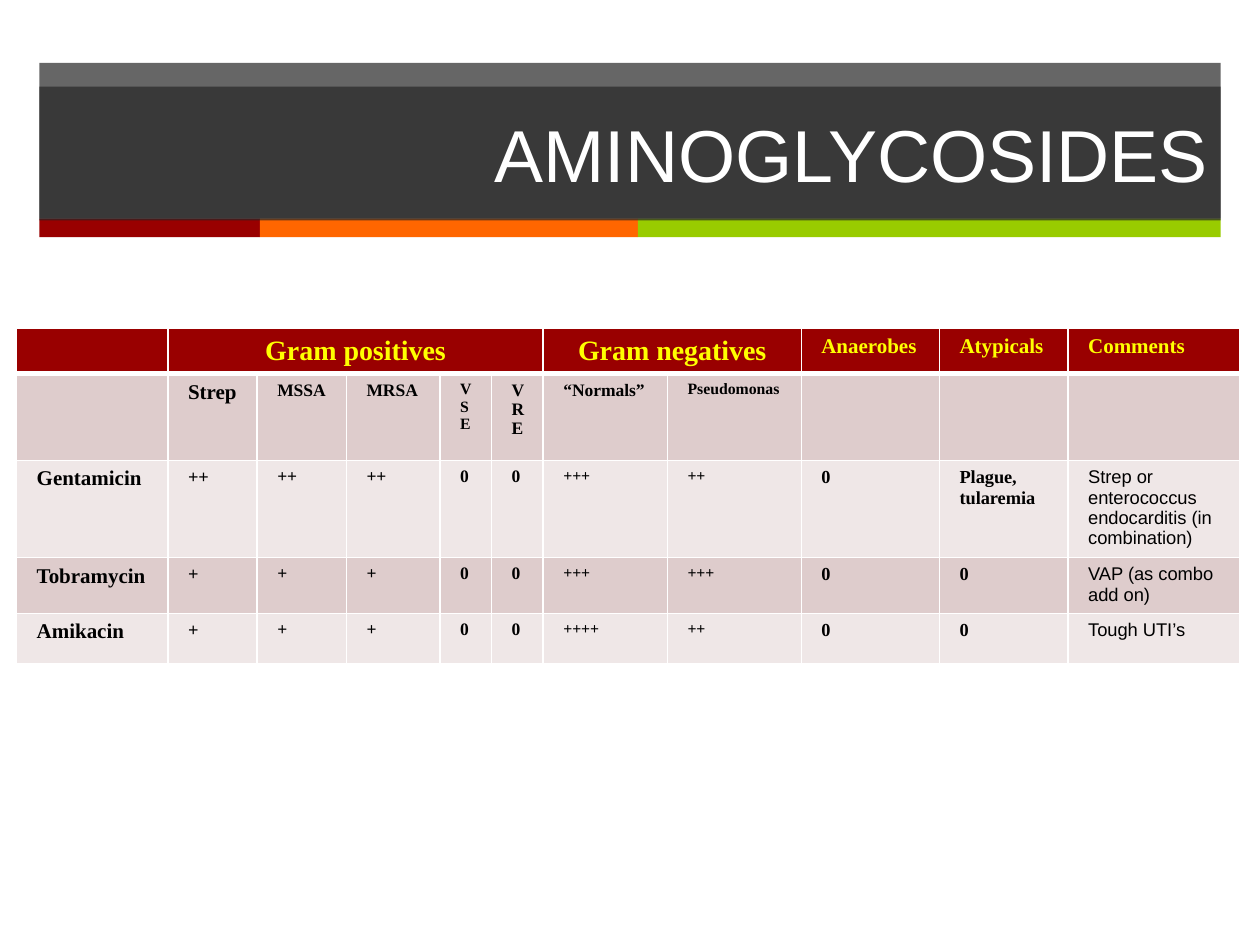
import pptx
import pptx.util
import pptx.dml.color
import pptx.enum.shapes
import pptx.enum.text
import pptx.oxml
import pptx.oxml.ns

Pt = pptx.util.Pt
RGB = pptx.dml.color.RGBColor
ALIGN = pptx.enum.text.PP_ALIGN
MIDDLE = pptx.enum.text.MSO_ANCHOR.MIDDLE

CHARCOAL = RGB(0x26, 0x26, 0x26)
CRIMSON = RGB(0x99, 0x00, 0x00)
ORANGE = RGB(0xFF, 0x66, 0x00)
LIME = RGB(0x99, 0xCC, 0x00)
YELLOW = RGB(0xFF, 0xFF, 0x00)
WHITE = RGB(0xFF, 0xFF, 0xFF)
BLACK = RGB(0x00, 0x00, 0x00)
ROSE = RGB(0xDE, 0xCC, 0xCC)
PALE_ROSE = RGB(0xEF, 0xE7, 0xE7)

SERIF, SANS = "Times New Roman", "Arial"
DRUG_WIDTHS = [86.5, 51, 51, 53.5, 29.5, 29.5, 71, 76.5, 79, 73.5, 98]
ROW_HEIGHTS = [26, 49.5, 55.5, 32, 29]
HEADING_SIZES = [12] + [16] * 7 + [12] * 3
ORGANISM_SIZES = [12, 12, 10, 10, 9, 10, 10, 9, 12, 12, 12]
DRUG_SIZES = [12, 10.5, 10, 10, 10, 10, 9, 9, 10.5, 10.5, 10.5]
SPECTRUM = [
    ["", "Gram positives", "", "", "", "", "Gram negatives", "",
     "Anaerobes", "Atypicals", "Comments"],
    ["", "Strep", "MSSA", "MRSA", "VSE", "VRE", "“Normals”", "Pseudomonas", "", "", ""],
    ["Gentamicin", "++", "++", "++", "0", "0", "+++", "++", "0", "Plague, tularemia",
     "Strep or enterococcus endocarditis (in combination)"],
    ["Tobramycin", "+", "+", "+", "0", "0", "+++", "+++", "0", "0", "VAP (as combo add on)"],
    ["Amikacin", "+", "+", "+", "0", "0", "++++", "++", "0", "0", "Tough UTI’s"],
]


def apply(target, formats):
    """Set each attribute of the target from a dict of format values."""
    for name, value in formats.items():
        setattr(target, name, value)


def fill_solid(part, color, opacity=None):
    """Fill a shape or cell with one colour, optionally translucent."""
    part.fill.solid()
    part.fill.fore_color.rgb = color
    if opacity:
        srgb = part._element.find(".//" + pptx.oxml.ns.qn("a:srgbClr"))
        srgb.append(pptx.oxml.parse_xml(
            f'<a:alpha {pptx.oxml.ns.nsdecls("a")} val="{opacity * 1000}"/>'))


def add_bar(slide, left, top, width, height, color, opacity=None):
    """Draw one plain bar of the banner."""
    bar = slide.shapes.add_shape(pptx.enum.shapes.MSO_SHAPE.RECTANGLE,
                                 Pt(left), Pt(top), Pt(width), Pt(height))
    bar.shadow.inherit = False
    bar.line.fill.background()
    fill_solid(bar, color, opacity)


def build_banner(slide, left, top, width, height):
    """Place the translucent banner, its colour strip and the title."""
    strip_height = 10.5
    strip_top = top + height - strip_height
    add_bar(slide, left, top, width, strip_top - top, CHARCOAL, 70)
    strip_left = left
    for color, share in ((CRIMSON, 126), (ORANGE, 216), (LIME, width - 342)):
        add_bar(slide, strip_left, strip_top, share, strip_height, color)
        strip_left += share
    title = slide.shapes.title
    apply(title, {"left": Pt(left), "top": Pt(top + 13.5),
                  "width": Pt(width), "height": Pt(76.5)})
    fill_solid(title, CHARCOAL, 70)
    apply(title.text_frame, {"text": "AMINOGLYCOSIDES", "word_wrap": True,
                             "vertical_anchor": MIDDLE})
    heading = title.text_frame.paragraphs[0]
    heading.alignment = ALIGN.RIGHT
    apply(heading.runs[0].font, {"name": SANS, "size": Pt(42), "bold": False})
    heading.runs[0].font.color.rgb = WHITE
    slide.shapes._spTree.append(title._element)


def add_borders(cell, widths):
    """Give a cell white borders, with a width in points for each side."""
    properties = cell._tc.get_or_add_tcPr()
    for side, width in widths.items():
        properties.append(pptx.oxml.parse_xml(
            f'<a:ln{side} {pptx.oxml.ns.nsdecls("a")} w="{Pt(width)}">'
            f'<a:solidFill><a:srgbClr val="{WHITE}"/></a:solidFill></a:ln{side}>'))


def write_cell(cell, wording, size, color, font_name):
    """Write a cell's wording in its font, or size an empty cell."""
    apply(cell, {"margin_left": Pt(11.5), "margin_right": Pt(11.5),
                 "margin_top": Pt(4), "margin_bottom": Pt(4)})
    paragraph = cell.text_frame.paragraphs[0]
    if not wording:
        paragraph._p.get_or_add_endParaRPr().set("sz", str(size * 100))
        return
    run = paragraph.add_run()
    run.text = wording
    apply(run.font, {"name": font_name, "size": Pt(size), "bold": font_name == SERIF})
    run.font.color.rgb = color
    if size == 16:
        paragraph.alignment = ALIGN.CENTER


def build_spectrum_table(slide, left, top):
    """Place the table of drugs against organisms."""
    table = slide.shapes.add_table(
        len(ROW_HEIGHTS), len(DRUG_WIDTHS), Pt(left), Pt(top),
        Pt(sum(DRUG_WIDTHS)), Pt(sum(ROW_HEIGHTS))).table
    for column, width in zip(table.columns, DRUG_WIDTHS):
        column.width = Pt(width)
    for row, height in zip(table.rows, ROW_HEIGHTS):
        row.height = Pt(height)
    row_sizes = [HEADING_SIZES, ORGANISM_SIZES] + [DRUG_SIZES] * 3
    row_fills = [CRIMSON, ROSE, PALE_ROSE, ROSE, PALE_ROSE]
    for r, (wordings, sizes, fill) in enumerate(zip(SPECTRUM, row_sizes, row_fills)):
        for c, (wording, size) in enumerate(zip(wordings, sizes)):
            cell = table.cell(r, c)
            is_comment = r > 1 and c == len(wordings) - 1
            write_cell(cell, wording, size, BLACK if r else YELLOW,
                       SANS if is_comment else SERIF)
            add_borders(cell, {"L": 1, "R": 1, "T": 3 if r == 1 else 1,
                               "B": 1 if r else 3})
            fill_solid(cell, fill)
    for first, last in ((1, 5), (6, 7)):
        table.cell(0, first).merge(table.cell(0, last))


def main():
    """Build the slide and save it."""
    deck = pptx.Presentation()
    apply(deck, {"slide_width": Pt(720), "slide_height": Pt(540)})
    slide = deck.slides.add_slide(deck.slide_layouts[5])
    build_banner(slide, 22.5, 36, 675, 99.5)
    build_spectrum_table(slide, 9.5, 187.5)
    deck.save("out.pptx")


if __name__ == "__main__":
    main()
